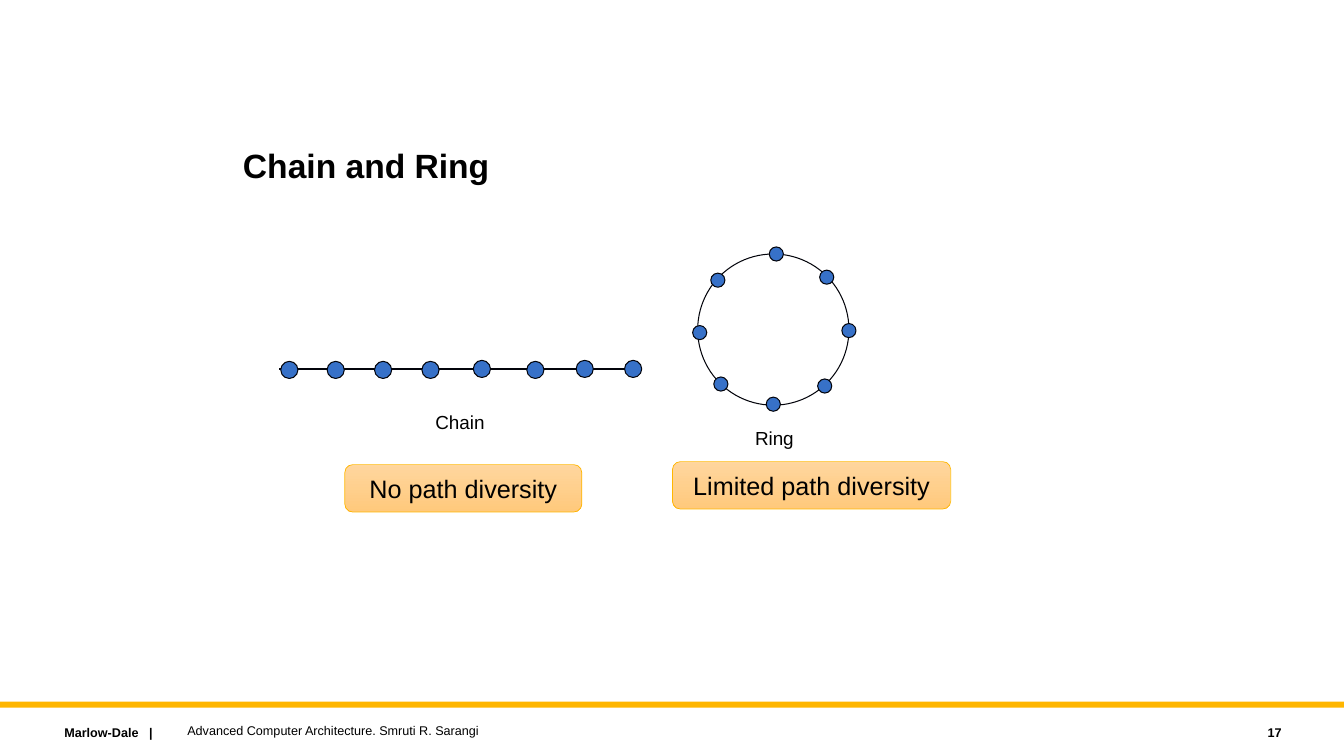
from lxml.etree import SubElement
from pptx import Presentation
from pptx.dml.color import RGBColor
from pptx.enum.shapes import MSO_CONNECTOR, MSO_SHAPE
from pptx.enum.text import MSO_ANCHOR, PP_ALIGN
from pptx.oxml.ns import qn
from pptx.util import Inches, Pt

COLORS = {
    "text": "000000",
    "gold": "FFB600",
    "node": "3771C8",
    "edge": "03040B",
    "light": "FFD69E",
    "deep": "FFC97C",
}


def tint(name):
    return RGBColor.from_string(COLORS[name])


class Board:
    """Holds the text style and the slide being drawn."""
    font = "Arial"

    def __init__(self, slide):
        self.shapes = slide.shapes

    def set_text(self, frame, text, size, bold=False, align=PP_ALIGN.LEFT,
                 anchor=MSO_ANCHOR.MIDDLE):
        frame.word_wrap = True
        frame.vertical_anchor = anchor
        para = frame.paragraphs[0]
        para.text = text
        para.alignment = align
        para.font.name = self.font
        para.font.size = Pt(size)
        para.font.bold = bold
        para.font.color.rgb = tint("text")
        return para

    def label(self, box, text, size, **style):
        frame = self.shapes.add_textbox(*map(Inches, box)).text_frame
        self.set_text(frame, text, size, **style)

    def title(self, box, text):
        frame = self.shapes.add_textbox(*map(Inches, box)).text_frame
        frame.margin_left = frame.margin_right = 0
        frame.margin_top = frame.margin_bottom = 0
        self.set_text(frame, text, 24, bold=True).line_spacing = 0.9

    def shape(self, kind, box, fill=None, line=None, width=0):
        item = self.shapes.add_shape(kind, *map(Inches, box))
        item.shadow.inherit = False
        if fill:
            item.fill.solid()
            item.fill.fore_color.rgb = tint(fill)
        else:
            item.fill.background()
        if line:
            item.line.color.rgb = tint(line)
            item.line.width = Pt(width)
        else:
            item.line.fill.background()
        return item

    def disc(self, x, y, size, fill=None):
        """Draw a circle centred on x, y."""
        box = (x - size / 2, y - size / 2, size, size)
        self.shape(MSO_SHAPE.OVAL, box, fill, "edge")

    def link(self, left, right, y):
        item = self.shapes.add_connector(
            MSO_CONNECTOR.STRAIGHT,
            Inches(left), Inches(y), Inches(right), Inches(y))
        item.line.color.rgb = tint("edge")
        item.line.width = Pt(0)
        SubElement(item._element.spPr, qn("a:effectLst"))

    def badge(self, box, text):
        item = self.shape(MSO_SHAPE.ROUNDED_RECTANGLE, box,
                          line="gold", width=0.5)
        item.fill.gradient()
        item.fill.gradient_angle = 270
        for stop, name in zip(item.fill.gradient_stops, ("light", "deep")):
            stop.color.rgb = tint(name)
        self.set_text(item.text_frame, text, 18, align=PP_ALIGN.CENTER)


def main():
    deck = Presentation()
    deck.slide_width, deck.slide_height = Inches(13.33), Inches(7.5)
    board = Board(deck.slides.add_slide(deck.slide_layouts[6]))

    board.shape(MSO_SHAPE.RECTANGLE, (0, 6.96, 13.33, 0.06), "gold")
    board.label((0.54, 7.14, 2.27, 0.25), "Marlow-Dale   |", 9, bold=True,
                anchor=MSO_ANCHOR.TOP)
    board.label((1.76, 7.12, 8, 0.25),
                "Advanced Computer Architecture. Smruti R. Sarangi", 9)
    board.label((11.41, 7.14, 1.4, 0.25), "17", 9, bold=True,
                align=PP_ALIGN.RIGHT)
    board.title((2.41, 1.28, 6.08, 0.77), "Chain and Ring")

    board.disc(7.67, 3.27, 1.5)
    ring = [(7.7, 2.52), (8.2, 2.75), (8.42, 3.28), (8.18, 3.83),
            (7.67, 4.01), (7.15, 3.81), (6.94, 3.3), (7.12, 2.78)]
    for x, y in ring:
        board.disc(x, y, 0.14, "node")

    board.link(2.77, 6.32, 3.66)
    chain = [(2.87, 3.67), (3.33, 3.67), (3.8, 3.67), (4.27, 3.67),
             (4.78, 3.66), (5.31, 3.67), (5.8, 3.66), (6.28, 3.66)]
    for x, y in chain:
        board.disc(x, y, 0.17, "node")

    for x, y, text in [(4.22, 4.02, "Chain"), (7.39, 4.18, "Ring")]:
        board.label((x, y, 1.75, 0.33), text, 13.5, anchor=MSO_ANCHOR.TOP)
    board.badge((3.42, 4.61, 2.35, 0.47), "No path diversity")
    board.badge((6.67, 4.58, 2.76, 0.47), "Limited path diversity")

    deck.save("out.pptx")


if __name__ == "__main__":
    main()
